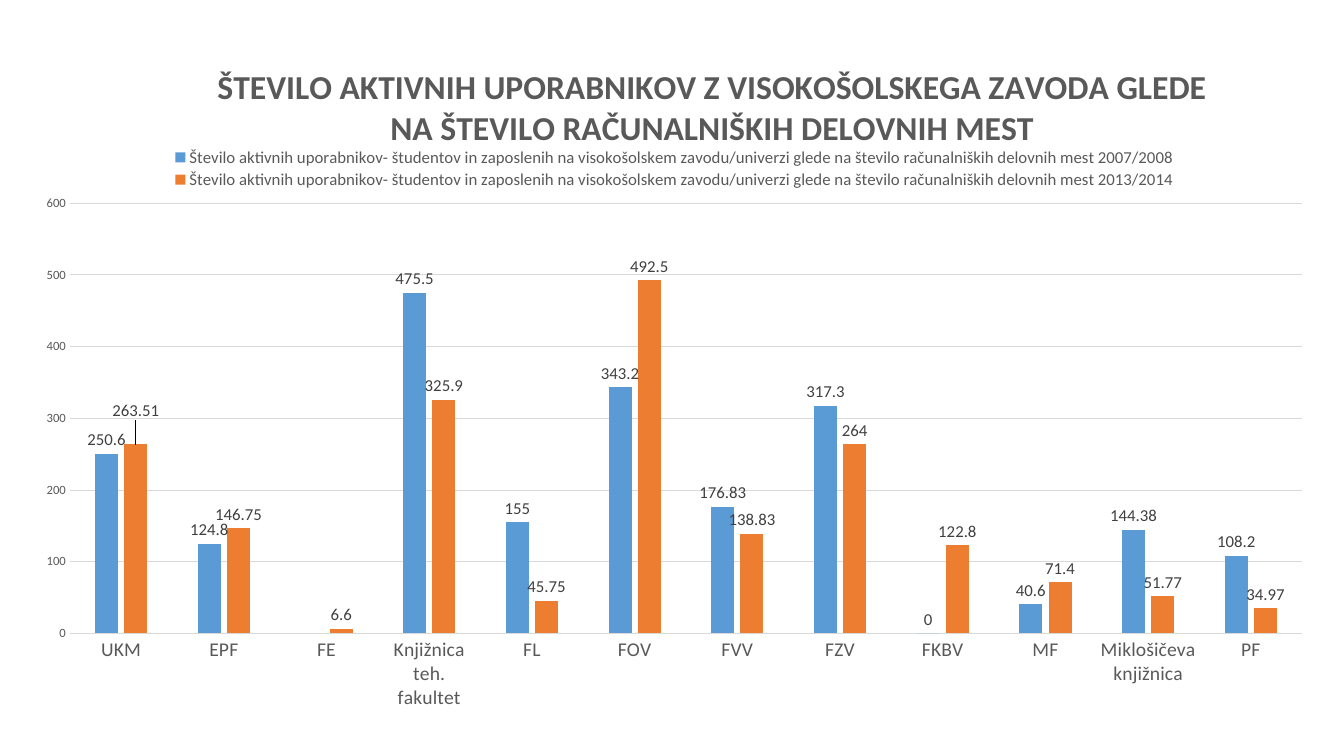
import pptx
import pptx.chart.data
import pptx.dml.color
import pptx.enum.chart
import pptx.oxml
import pptx.oxml.ns
import pptx.util

RGBColor = pptx.dml.color.RGBColor
BLUE = RGBColor(0x5B, 0x9B, 0xD5)
ORANGE = RGBColor(0xED, 0x7D, 0x31)
TEXT_GRAY = RGBColor(0x59, 0x59, 0x59)
LABEL_GRAY = RGBColor(0x40, 0x40, 0x40)
LINE_GRAY = RGBColor(0xD9, 0xD9, 0xD9)
PX = 9144  # EMU per px at 100 px to the inch

TITLE = ("ŠTEVILO AKTIVNIH UPORABNIKOV Z VISOKOŠOLSKEGA ZAVODA GLEDE "
         "NA ŠTEVILO RAČUNALNIŠKIH DELOVNIH MEST")
SERIES_NAME = ("Število aktivnih uporabnikov- študentov in zaposlenih na visokošolskem "
               "zavodu/univerzi glede na število računalniških delovnih mest ")
USERS = [
    ("UKM", 250.6, 263.51),
    ("EPF", 124.8, 146.75),
    ("FE", None, 6.6),
    ("Knjižnica teh. fakultet", 475.5, 325.9),
    ("FL", 155, 45.75),
    ("FOV", 343.2, 492.5),
    ("FVV", 176.83, 138.83),
    ("FZV", 317.3, 264),
    ("FKBV", 0, 122.8),
    ("MF", 40.6, 71.4),
    ("Miklošičeva knjižnica", 144.38, 51.77),
    ("PF", 108.2, 34.97),
]


def format_font(font, size, color=TEXT_GRAY, bold=False):
    font.name = "Calibri"
    font.size = pptx.util.Pt(size)
    font.bold = bold
    font.color.rgb = color


def set_layout(parent, index, **settings):
    """Give a chart part a manual layout as its child number index."""
    for old_layout in parent.findall(pptx.oxml.ns.qn("c:layout")):
        parent.remove(old_layout)
    items = "".join(f'<c:{name} val="{value}"/>' for name, value in settings.items())
    parent.insert(index, pptx.oxml.parse_xml(
        f'<c:layout {pptx.oxml.ns.nsdecls("c")}>'
        f"<c:manualLayout>{items}</c:manualLayout></c:layout>"))


presentation = pptx.Presentation()
presentation.slide_width = 1333 * PX
presentation.slide_height = 750 * PX
slide = presentation.slides.add_slide(presentation.slide_layouts[6])

categories, users_2007, users_2013 = zip(*USERS)
chart_data = pptx.chart.data.CategoryChartData()
chart_data.categories = categories
chart_data.add_series(SERIES_NAME + "2007/2008", users_2007)
chart_data.add_series(SERIES_NAME + "2013/2014", users_2013)
chart = slide.shapes.add_chart(
    pptx.enum.chart.XL_CHART_TYPE.COLUMN_CLUSTERED,
    31 * PX, 38 * PX, 1276 * PX, 666 * PX, chart_data).chart
format_font(chart.font, 10)

# Title and legend
chart.has_title = True
title_frame = chart.chart_title.text_frame
title_frame.text = TITLE
format_font(title_frame.paragraphs[0].runs[0].font, 24, bold=True)
set_layout(chart.chart_title._element, 1, xMode="edge", yMode="edge", x=0.14, y=0.03)

chart.has_legend = True
chart.legend.position = pptx.enum.chart.XL_LEGEND_POSITION.BOTTOM
chart.legend.include_in_layout = False
format_font(chart.legend.font, 12)
set_layout(chart.legend._element, 1, xMode="edge", yMode="edge",
           x=0.1, y=0.16, w=0.8, h=0.07)

# Axes
category_axis, value_axis = chart.category_axis, chart.value_axis
for axis, size in ((category_axis, 14), (value_axis, 9)):
    axis.major_tick_mark = pptx.enum.chart.XL_TICK_MARK.NONE
    axis.minor_tick_mark = pptx.enum.chart.XL_TICK_MARK.NONE
    format_font(axis.tick_labels.font, size)
value_axis.minimum_scale = 0
value_axis.maximum_scale = 600
value_axis.major_unit = 100
value_axis.has_major_gridlines = True
value_axis.format.line.fill.background()
for line in (category_axis.format.line, value_axis.major_gridlines.format.line):
    line.color.rgb = LINE_GRAY
    line.width = pptx.util.Pt(0.75)

# Columns and their labels
plot = chart.plots[0]
plot.gap_width = 219
plot.overlap = -27
plot.vary_by_categories = False
set_layout(chart._chartSpace.chart.plotArea, 0, layoutTarget="inner",
           xMode="edge", yMode="edge", x=0.03, y=0.247, w=0.958, h=0.644)
OUTSIDE_END = pptx.enum.chart.XL_LABEL_POSITION.OUTSIDE_END
for series, color in zip(plot.series, (BLUE, ORANGE)):
    series.format.fill.solid()
    series.format.fill.fore_color.rgb = color
    series.invert_if_negative = False
    labels = series.data_labels
    labels.show_value = True
    labels.position = OUTSIDE_END
    format_font(labels.font, 12, LABEL_GRAY)

# The first label of the second series is raised clear of its neighbour
raised_label = plot.series[1].points[0].data_label
raised_label.position = OUTSIDE_END
format_font(raised_label.font, 12, LABEL_GRAY)
set_layout(plot.series[1]._element.find(".//" + pptx.oxml.ns.qn("c:dLbl")), 1, x=0, y=-0.03)

presentation.save("out.pptx")
